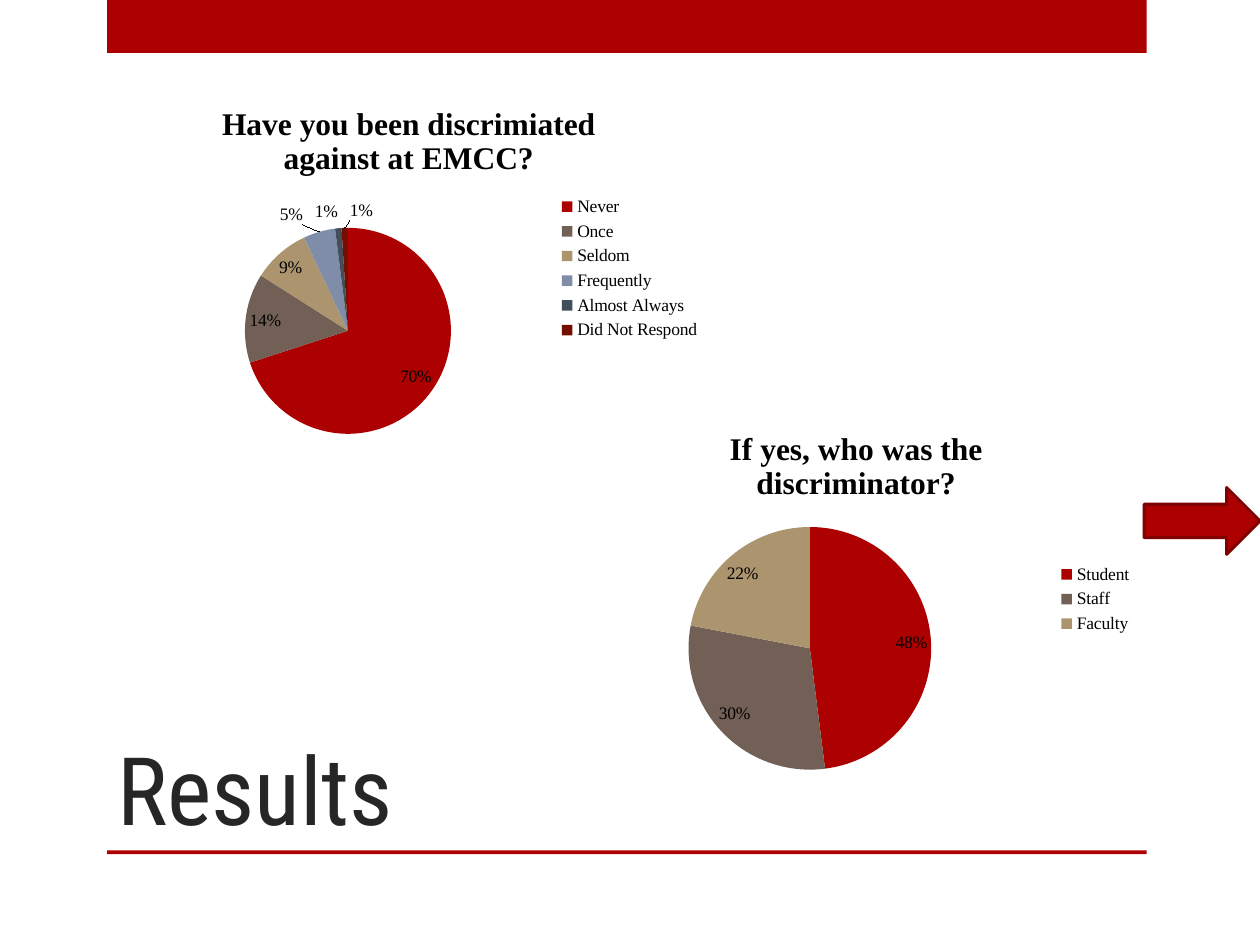
import lxml.etree
import pptx
import pptx.chart.data
import pptx.dml.color
import pptx.enum.chart
import pptx.enum.shapes
import pptx.enum.text
import pptx.oxml
import pptx.util

Inches = pptx.util.Inches
Pt = pptx.util.Pt
SHAPE = pptx.enum.shapes.MSO_SHAPE
SERIF = "Times New Roman"
RED = "AD0101"
HUES = [RED, "726056", "AC956E", "808DA9", "424E5B", "730E00"]


def color(code):
    return pptx.dml.color.RGBColor.from_string(code)


def style(font, name, size, code, bold=False):
    font.name = name
    font.size = Pt(size)
    font.bold = bold
    font.color.rgb = color(code)


def add_block(slide, kind, box, line=None):
    shape = slide.shapes.add_shape(kind, *map(Inches, box))
    shape.shadow.inherit = False
    shape.fill.solid()
    shape.fill.fore_color.rgb = color(RED)
    if line:
        shape.line.color.rgb = color(line)
        shape.line.width = Pt(1.75)
    else:
        shape.line.fill.background()


def set_title(slide, text, box):
    title = slide.shapes.title
    title.left, title.top, title.width, title.height = map(Inches, box)
    frame = title.text_frame
    frame.text = text
    frame.word_wrap = True
    frame.vertical_anchor = pptx.enum.text.MSO_ANCHOR.BOTTOM
    para = frame.paragraphs[0]
    para.alignment = pptx.enum.text.PP_ALIGN.LEFT
    style(para.font, "Roboto Condensed", 54, "262626")


def place_plot(chart, box):
    """Fix the pie's area, given as fractions of the chart."""
    area = chart._chartSpace.chart.plotArea
    for old in area.findall(pptx.oxml.ns.qn("c:layout")):
        area.remove(old)
    layout = lxml.etree.Element(pptx.oxml.ns.qn("c:layout"))
    manual = lxml.etree.SubElement(layout, pptx.oxml.ns.qn("c:manualLayout"))
    parts = [("layoutTarget", "inner"), ("xMode", "edge"), ("yMode", "edge")]
    for tag, val in parts + list(zip("xywh", box)):
        item = lxml.etree.SubElement(manual, pptx.oxml.ns.qn("c:" + tag))
        item.set("val", str(val))
    area.insert(0, layout)


def add_pie(slide, title, shares, box, plot_box):
    data = pptx.chart.data.CategoryChartData()
    data.categories = list(shares)
    data.add_series("Series 1", list(shares.values()))
    chart = slide.shapes.add_chart(
        pptx.enum.chart.XL_CHART_TYPE.PIE, *map(Inches, box), data).chart
    style(chart.font, SERIF, 10, "000000")

    # Heading and legend
    chart.has_title = True
    frame = chart.chart_title.text_frame
    frame.text = title
    style(frame.paragraphs[0].font, SERIF, 18, "000000", True)
    chart.chart_title.include_in_layout = False
    chart.has_legend = True
    chart.legend.position = pptx.enum.chart.XL_LEGEND_POSITION.RIGHT
    chart.legend.include_in_layout = False

    # Slices and their labels
    plot = chart.plots[0]
    plot.vary_by_categories = True
    for i, hue in enumerate(HUES[:len(shares)]):
        fill = plot.series[0].points[i].format.fill
        fill.solid()
        fill.fore_color.rgb = color(hue)
    plot.has_data_labels = True
    labels = plot.data_labels
    labels.show_percentage = True
    labels.show_value = False
    labels.number_format = "0%"
    labels.number_format_is_linked = False
    labels.position = pptx.enum.chart.XL_LABEL_POSITION.BEST_FIT
    style(labels.font, SERIF, 10, "000000")
    place_plot(chart, plot_box)


def main():
    deck = pptx.Presentation()
    deck.slide_width, deck.slide_height = Inches(10), Inches(7.5)
    slide = deck.slides.add_slide(deck.slide_layouts[5])

    # Frame bars and title
    for top, height in ((0, 0.42), (6.75, 0.03)):
        add_block(slide, SHAPE.RECTANGLE, (0.85, top, 8.25, height))
    set_title(slide, "Results", (0.83, 5, 7.42, 1.75))

    # Survey charts
    add_pie(slide, "Have you been discrimiated against at EMCC?",
            {"Never": 70, "Once": 14, "Seldom": 9, "Frequently": 5,
             "Almost Always": 1, "Did Not Respond": 1},
            (0.83, 0.67, 4.83, 2.92), (0.23, 0.39, 0.34, 0.56))
    add_pie(slide, "If yes, who was the discriminator?",
            {"Student": 48, "Staff": 30, "Faculty": 22},
            (4.5, 3.25, 4.59, 3.01), (0.21, 0.31, 0.42, 0.64))

    # Arrow to the next slide
    add_block(slide, SHAPE.RIGHT_ARROW, (9.08, 3.87, 0.92, 0.53), "800101")
    deck.save("out.pptx")


if __name__ == "__main__":
    main()
